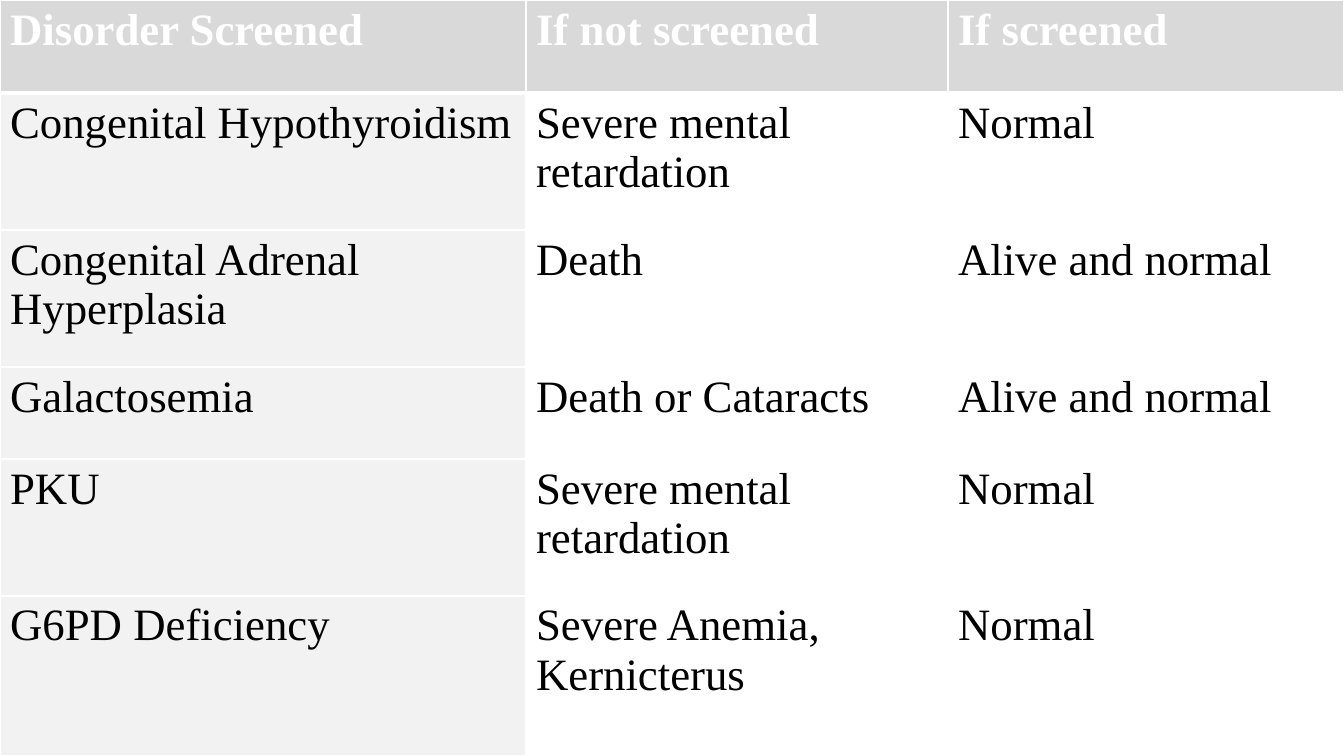
from dataclasses import dataclass

from lxml import etree
from pptx import Presentation
from pptx.dml.color import RGBColor
from pptx.enum.text import MSO_ANCHOR
from pptx.oxml.ns import qn
from pptx.table import _Cell
from pptx.util import Emu, Pt

TOP = MSO_ANCHOR.TOP
WIDE, HIGH = 1344, 756
FONT = "Times New Roman"
WHITE, BLACK, GREY, PALE = "FFFFFF", "000000", "D9D9D9", "F2F2F2"
COLS = (526, 422, 396)


@dataclass
class Row:
    high: int
    texts: tuple[str, str, str]


ROWS = (
    Row(93, ("Disorder Screened", "If not screened", "If screened")),
    Row(137, ("Congenital Hypothyroidism", "Severe mental retardation", "Normal")),
    Row(137, ("Congenital Adrenal Hyperplasia", "Death", "Alive and normal")),
    Row(92, ("Galactosemia", "Death or Cataracts", "Alive and normal")),
    Row(137, ("PKU", "Severe mental retardation", "Normal")),
    Row(160, ("G6PD Deficiency", "Severe Anemia, Kernicterus", "Normal")),
)


def px(count: int) -> Emu:
    return Emu(round(count * 914400 / 100.8))


def tint(code: str) -> RGBColor:
    return RGBColor.from_string(code)


def write(cell: _Cell, text: str, *, size: int = 32, color: str = BLACK,
          bold: bool = False) -> None:
    cell.vertical_anchor = TOP
    run = cell.text_frame.paragraphs[0].add_run()
    run.text = text
    run.font.name = FONT
    run.font.size = Pt(size)
    run.font.bold = bold
    run.font.color.rgb = tint(color)


def paint(cell: _Cell, color: str) -> None:
    cell.fill.solid()
    cell.fill.fore_color.rgb = tint(color)


def edge(cell: _Cell, **widths: int) -> None:
    props = cell._tc.get_or_add_tcPr()
    for place, (side, width) in enumerate(widths.items()):
        line = etree.Element(qn(f"a:ln{side}"), w=str(Pt(width)))
        fill = etree.SubElement(line, qn("a:solidFill"))
        etree.SubElement(fill, qn("a:srgbClr"), val=WHITE)
        props.insert(place, line)


def main() -> None:
    deck = Presentation()
    deck.slide_width, deck.slide_height = px(WIDE), px(HIGH)
    slide = deck.slides.add_slide(deck.slide_layouts[6])
    frame = slide.shapes.add_table(len(ROWS), len(COLS), 0, 0, px(WIDE), px(HIGH))
    table = frame.table
    table.horz_banding = False
    for col, wide in zip(table.columns, COLS):
        col.width = px(wide)
    for down, row in enumerate(ROWS):
        table.rows[down].height = px(row.high)
        head = down == 0
        for over, text in enumerate(row.texts):
            cell = table.cell(down, over)
            write(cell, text, color=WHITE if head else BLACK, bold=head)
            paint(cell, GREY if head else PALE if over == 0 else WHITE)
            edge(cell, L=1, R=1, T=3 if down == 1 else 1, B=3 if head else 1)
    deck.save("out.pptx")


if __name__ == "__main__":
    main()
